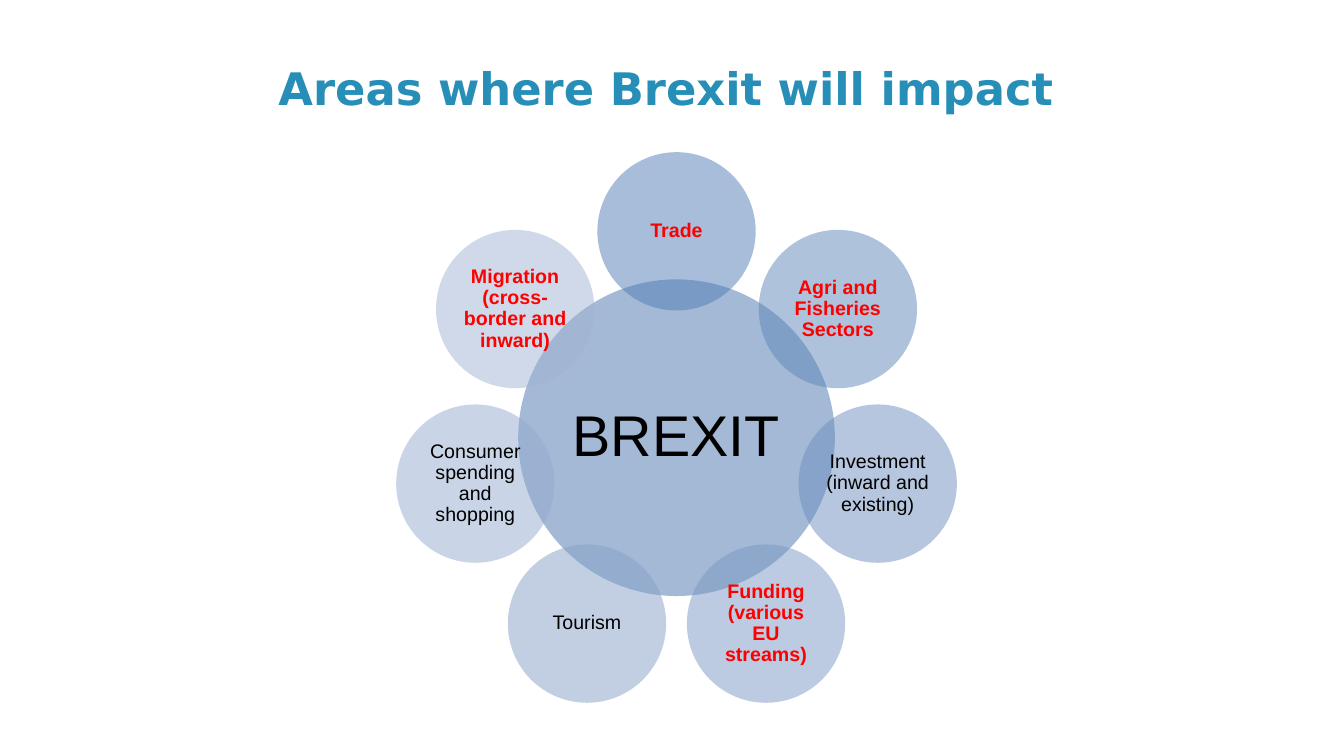
from dataclasses import dataclass
from math import cos, pi, sin

from lxml.etree import SubElement
from pptx import Presentation
from pptx.dml.color import RGBColor
from pptx.enum.shapes import MSO_SHAPE as Shape
from pptx.enum.text import MSO_ANCHOR as Anchor, MSO_AUTO_SIZE as Fit, PP_ALIGN as Align
from pptx.oxml.ns import qn
from pptx.slide import Slide
from pptx.text.text import TextFrame
from pptx.util import Cm, Pt

BLACK = RGBColor(0x00, 0x00, 0x00)
RED = RGBColor(0xFF, 0x00, 0x00)
TEAL = RGBColor(0x27, 0x8F, 0xB7)
HUB = RGBColor(0x48, 0x75, 0xAC)

MID_X, MID_Y = 17.05, 11.03
RING = 5.2
HUB_SIZE, AREA_SIZE = 7.98, 3.99


@dataclass(frozen=True)
class Area:
    text: str
    fill: RGBColor
    key: bool = False


AREAS = (
    Area("Trade", RGBColor(0x51, 0x7D, 0xB5), key=True),
    Area("Agri and Fisheries Sectors", RGBColor(0x5F, 0x86, 0xBA), key=True),
    Area("Investment (inward and existing)", RGBColor(0x6C, 0x8F, 0xBF)),
    Area("Funding (various EU streams)", RGBColor(0x7A, 0x98, 0xC4), key=True),
    Area("Tourism", RGBColor(0x87, 0xA1, 0xC9)),
    Area("Consumer spending and shopping", RGBColor(0x95, 0xAB, 0xCE)),
    Area("Migration (cross-border and inward)", RGBColor(0xA2, 0xB4, 0xD4), key=True),
)


def write(frame: TextFrame, text: str, *, size: float, color: RGBColor = BLACK,
          bold: bool = False, face: str = "Arial", lead: float = 0.9,
          left: float = 0.05, right: float = 0.05, edge: float = 0.05) -> None:
    """Fill a frame with one centred paragraph; insets are in cm."""
    frame.word_wrap = True
    frame.auto_size = Fit.NONE
    frame.vertical_anchor = Anchor.MIDDLE
    frame.margin_left, frame.margin_right = Cm(left), Cm(right)
    frame.margin_top = frame.margin_bottom = Cm(edge)
    para = frame.paragraphs[0]
    para.alignment = Align.CENTER
    para.line_spacing = lead
    run = para.add_run()
    run.text = text
    font = run.font
    font.name, font.size, font.bold = face, Pt(size), bold
    font.color.rgb = color


def disc(slide: Slide, x: float, y: float, size: float, fill: RGBColor) -> TextFrame:
    """Draw a half-clear circle centred on x, y and return its text frame."""
    shape = slide.shapes.add_shape(
        Shape.OVAL, Cm(x - size / 2), Cm(y - size / 2), Cm(size), Cm(size))
    shape.shadow.inherit = False
    shape.line.fill.background()
    shape.fill.solid()
    shape.fill.fore_color.rgb = fill
    tint = shape.element.spPr.find(qn("a:solidFill")).find(qn("a:srgbClr"))
    SubElement(tint, qn("a:alpha"), val="50000")
    return shape.text_frame


def main() -> None:
    deck = Presentation()
    deck.slide_width, deck.slide_height = Cm(33.87), Cm(19.05)
    slide = deck.slides.add_slide(deck.slide_layouts[5])

    title = slide.shapes.title
    title.left, title.top, title.width, title.height = Cm(6.73), Cm(1.6), Cm(20.5), Cm(1.24)
    write(title.text_frame, "Areas where Brexit will impact", size=32, color=TEAL,
          bold=True, face="DejaVu Sans", lead=1.0, left=0, right=0.38)

    write(disc(slide, MID_X, MID_Y, HUB_SIZE, HUB), "BREXIT", size=41)
    for i, area in enumerate(AREAS):
        turn = 2 * pi * i / len(AREAS)
        frame = disc(slide, MID_X + RING * sin(turn), MID_Y - RING * cos(turn),
                     AREA_SIZE, area.fill)
        write(frame, area.text, size=14, color=RED if area.key else BLACK, bold=area.key)

    deck.save("out.pptx")


if __name__ == "__main__":
    main()
